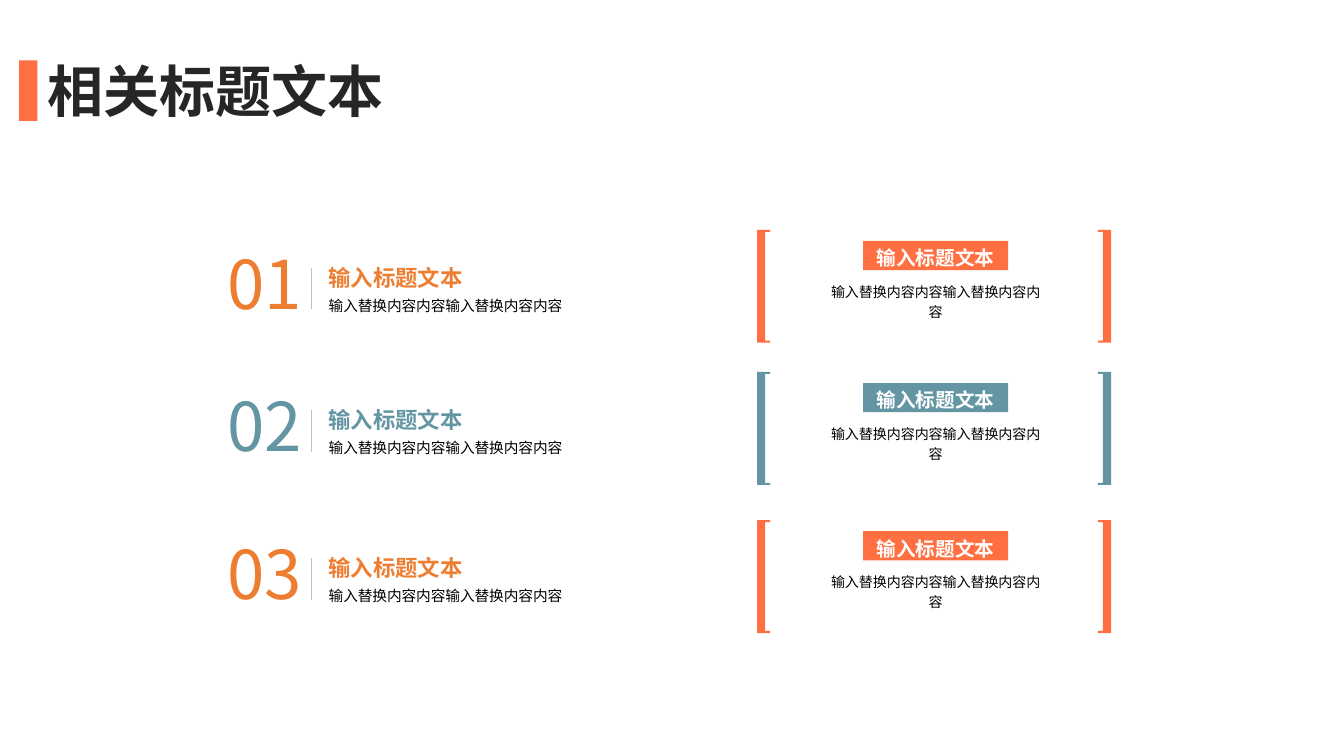
from pptx import Presentation
from pptx.dml.color import RGBColor
from pptx.enum.shapes import MSO_CONNECTOR, MSO_SHAPE
from pptx.enum.text import MSO_ANCHOR, MSO_AUTO_SIZE, PP_ALIGN
from pptx.oxml.ns import qn
from pptx.util import Inches, Pt

FONT = "Noto Sans CJK SC"
CORAL = RGBColor(0xFF, 0x6F, 0x41)
ORANGE = RGBColor(0xED, 0x7D, 0x31)
TEAL = RGBColor(0x64, 0x95, 0xA3)
GREY = RGBColor(0xBF, 0xBF, 0xBF)
DARK = RGBColor(0x26, 0x26, 0x26)
BLACK = RGBColor(0, 0, 0)
WHITE = RGBColor(0xFF, 0xFF, 0xFF)

HEAD = "输入标题文本"
BODY = "输入替换内容内容输入替换内容内容"
ROWS = [
    ("01", 2.28, ORANGE, CORAL),
    ("02", 3.69, TEAL, TEAL),
    ("03", 5.16, ORANGE, CORAL),
]


def write(shape, text, size, color, bold=False, align=PP_ALIGN.LEFT,
          space=1.0, wrap=True, anchor=MSO_ANCHOR.TOP):
    frame = shape.text_frame
    frame.auto_size = MSO_AUTO_SIZE.NONE
    frame.word_wrap = wrap
    frame.vertical_anchor = anchor
    para = frame.paragraphs[0]
    para.alignment = align
    para.line_spacing = space
    run = para.add_run()
    run.text = text
    font = run.font
    font.name, font.size, font.bold = FONT, Pt(size), bold
    font.color.rgb = color
    east = font._element.makeelement(qn("a:ea"), {"typeface": FONT})
    font._element.find(qn("a:latin")).addnext(east)


def label(slide, box, text, size, color, inset=True, **style):
    shape = slide.shapes.add_textbox(*map(Inches, box))
    if not inset:
        frame = shape.text_frame
        frame.margin_left = frame.margin_right = 0
        frame.margin_top = frame.margin_bottom = 0
    write(shape, text, size, color, **style)


def paint(shape, color):
    shape.shadow.inherit = False
    shape.fill.solid()
    shape.fill.fore_color.rgb = color
    shape.line.fill.background()


def block(slide, box, color):
    shape = slide.shapes.add_shape(MSO_SHAPE.RECTANGLE, *map(Inches, box))
    paint(shape, color)
    return shape


def rule(slide, x, top, end):
    line = slide.shapes.add_connector(
        MSO_CONNECTOR.STRAIGHT, Inches(x), Inches(top), Inches(x), Inches(end))
    line.line.color.rgb = GREY
    line.line.width = Pt(1)
    props = line._element.spPr
    props.append(props.makeelement(qn("a:effectLst"), {}))


def bracket(slide, edge, top, side, color):
    tip, stem = edge + side * 0.13, edge + side * 0.08
    end, lip = top + 1.12, 0.02
    points = [(edge, top), (tip, top), (tip, top + lip), (stem, top + lip),
              (stem, end - lip), (tip, end - lip), (tip, end), (edge, end)]
    points = [(Inches(x), Inches(y)) for x, y in points]
    path = slide.shapes.build_freeform(*points[0])
    path.add_line_segments(points[1:], close=True)
    paint(path.convert_to_shape(), color)


def item(slide, number, top, color):
    label(slide, (2.16, top + 0.07, 0.82, 0.78), number, 48, color, wrap=False)
    rule(slide, 3.09, top + 0.38, top + 0.79)
    label(slide, (3.26, top + 0.31, 1.18, 0.21), HEAD, 16, color,
          inset=False, bold=True, space=1.1, wrap=False)
    label(slide, (3.26, top + 0.63, 3.51, 0.23), BODY, 10.5, BLACK,
          inset=False, space=1.2)


def card(slide, top, color):
    bracket(slide, 7.51, top, 1, color)
    bracket(slide, 11.02, top, -1, color)
    tag = block(slide, (8.56, top + 0.11, 1.44, 0.29), color)
    write(tag, HEAD, 14, WHITE, bold=True, align=PP_ALIGN.CENTER,
          space=1.2, wrap=False, anchor=MSO_ANCHOR.MIDDLE)
    label(slide, (8.08, top + 0.45, 2.4, 0.91), BODY, 10, BLACK,
          align=PP_ALIGN.CENTER, space=1.2)


def header(slide):
    title = slide.shapes.title
    title.left, title.top = Inches(0.37), Inches(0.51)
    title.width, title.height = Inches(7.05), Inches(0.77)
    write(title, "相关标题文本", 40, DARK, bold=True)
    block(slide, (0.19, 0.6, 0.18, 0.6), CORAL)


def main():
    deck = Presentation()
    deck.slide_width, deck.slide_height = Inches(13.33), Inches(7.5)
    slide = deck.slides.add_slide(deck.slide_layouts[5])
    header(slide)
    for number, top, accent, fill in ROWS:
        item(slide, number, top, accent)
        card(slide, top, fill)
    deck.save("out.pptx")


if __name__ == "__main__":
    main()
